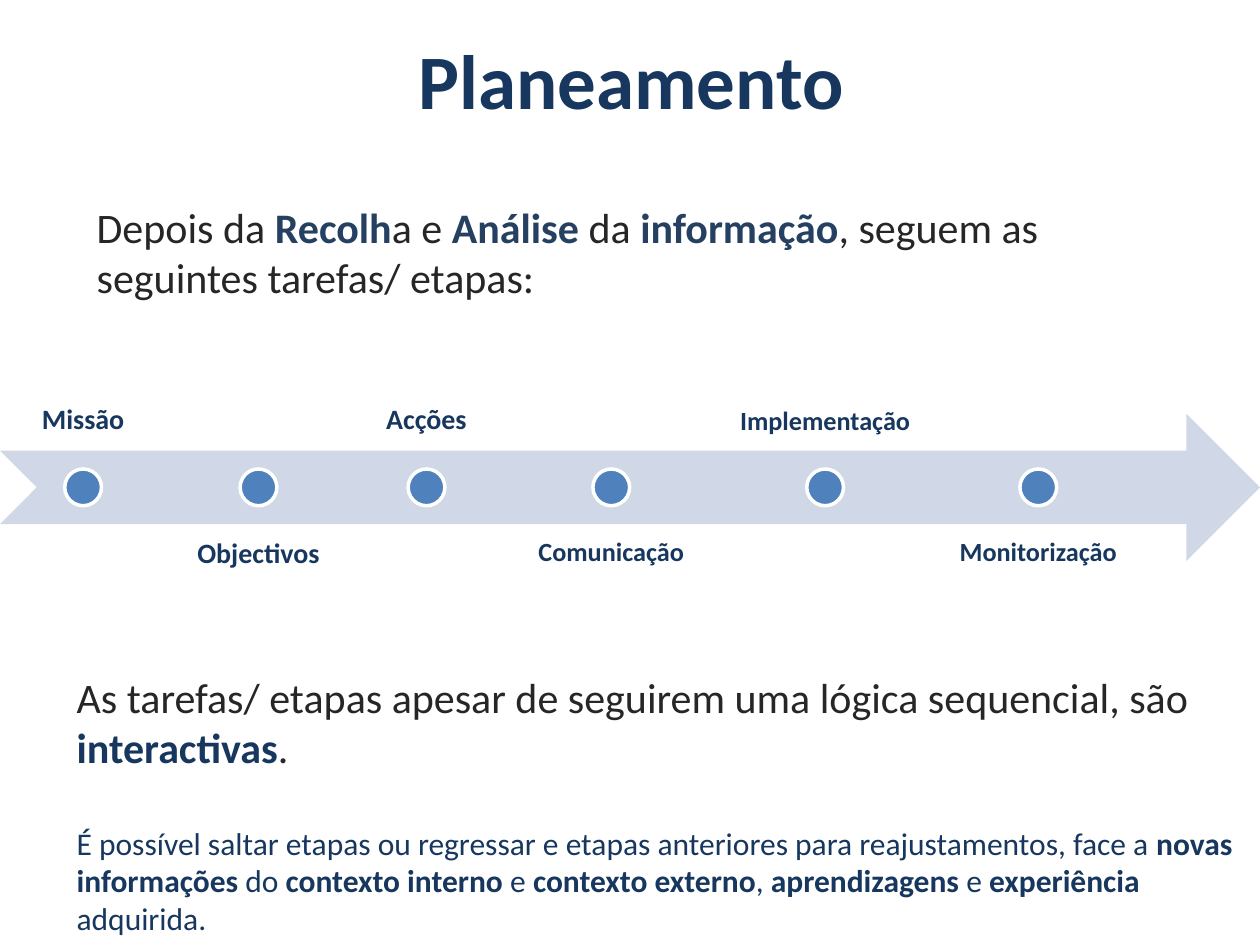
from pptx import Presentation
from pptx.dml.color import RGBColor
from pptx.enum.shapes import MSO_SHAPE
from pptx.enum.text import MSO_ANCHOR, PP_ALIGN
from pptx.util import Pt

ARROW, DOT = MSO_SHAPE.NOTCHED_RIGHT_ARROW, MSO_SHAPE.OVAL
TOP, MIDDLE, BOTTOM = MSO_ANCHOR.TOP, MSO_ANCHOR.MIDDLE, MSO_ANCHOR.BOTTOM
CENTER = PP_ALIGN.CENTER

FONT = "Calibri"
NAVY, STEEL, CHARCOAL = "17375E", "254061", "262626"
BAND, BLUE, WHITE = "D0D8E8", "4F81BD", "FFFFFF"

# label, left and width of its column, text size
STAGES = [
    ("Missão", 0, 95, 16),
    ("Objectivos", 98, 99.4, 16),
    ("Acções", 199.4, 88.6, 16),
    ("Comunicação", 291, 116.6, 15),
    ("Implementação", 410, 123, 15),
    ("Monitorização", 538.6, 109.4, 15),
]


def color(hex_string):
    return RGBColor.from_string(hex_string)


def set_font(font, size, hex_string, bold=False):
    font.name, font.size, font.bold = FONT, Pt(size), bold
    font.color.rgb = color(hex_string)


def add_shape(shapes, preset, left, top, width, height, fill):
    shape = shapes.add_shape(preset, Pt(left), Pt(top), Pt(width), Pt(height))
    shape.shadow.inherit = False
    shape.fill.solid()
    shape.fill.fore_color.rgb = color(fill)
    shape.line.fill.background()
    return shape


def add_frame(shapes, left, top, width, height):
    frame = shapes.add_textbox(Pt(left), Pt(top), Pt(width), Pt(height)).text_frame
    frame.word_wrap = True
    return frame


def write_emphasized(paragraph, text, size, plain, strong):
    """Write text in which every second part between asterisks is bold."""
    set_font(paragraph.font, size, plain)
    for index, part in enumerate(text.split("*")):
        run = paragraph.add_run()
        run.text = part
        if index % 2:
            run.font.bold = True
            run.font.color.rgb = color(strong)


def add_title(slide, left, top, width, height):
    title = slide.shapes.title
    title.left, title.top = Pt(left), Pt(top)
    title.width, title.height = Pt(width), Pt(height)
    title.text_frame.vertical_anchor = MIDDLE
    heading = title.text_frame.paragraphs[0]
    heading.text = "Planeamento"
    heading.alignment = CENTER
    set_font(heading.font, 44, NAVY, bold=True)


def add_intro(slide, left, top, width, height):
    frame = add_frame(slide.shapes, left, top, width, height)
    write_emphasized(
        frame.paragraphs[0],
        "Depois da *Recolh*a e *Análise* da *informação*, "
        "seguem as seguintes tarefas/ etapas:",
        24, CHARCOAL, STEEL)


def add_label(shapes, label, size, anchor, left, top, width, height):
    frame = add_frame(shapes, left, top, width, height)
    frame.vertical_anchor = anchor
    frame.margin_left = frame.margin_right = Pt(8.5)
    frame.margin_top = frame.margin_bottom = Pt(8.5)
    paragraph = frame.paragraphs[0]
    paragraph.text = label
    paragraph.alignment = CENTER
    paragraph.line_spacing = 0.9
    set_font(paragraph.font, size, NAVY, bold=True)


def add_timeline(slide, left, top, width, height):
    """Draw the arrow with its stages, labelled above and below in turn."""
    shapes = slide.shapes.add_group_shape().shapes
    arrow_height = height * 0.4
    arrow_top = top + (height - arrow_height) / 2
    add_shape(shapes, ARROW, left, arrow_top, width, arrow_height, BAND)
    dot_size = arrow_height / 4
    dot_top = top + (height - dot_size) / 2
    for index, (label, offset, column, size) in enumerate(STAGES):
        above = index % 2 == 0
        add_label(shapes, label, size, BOTTOM if above else TOP, left + offset,
                  top if above else top + height - arrow_height,
                  column, arrow_height)
        dot = add_shape(shapes, DOT, left + offset + (column - dot_size) / 2,
                        dot_top, dot_size, dot_size, BLUE)
        dot.line.color.rgb = color(WHITE)
        dot.line.width = Pt(2)


def add_conclusion(slide, left, top, width, height):
    frame = add_frame(slide.shapes, left, top, width, height)
    write_emphasized(
        frame.paragraphs[0],
        "As tarefas/ etapas apesar de seguirem uma lógica sequencial, são "
        "*interactivas*.",
        24, CHARCOAL, NAVY)
    detail = frame.add_paragraph()
    detail.space_before = Pt(29.3)
    write_emphasized(
        detail,
        "É possível saltar etapas ou regressar e etapas anteriores para "
        "reajustamentos, face a *novas informações *do *contexto interno *e "
        "*contexto externo*, *aprendizagens* e *experiência* adquirida.",
        18, NAVY, NAVY)


def main():
    deck = Presentation()
    deck.slide_width, deck.slide_height = Pt(720), Pt(540)
    slide = deck.slides.add_slide(deck.slide_layouts.get_by_name("Title Only"))
    add_title(slide, 36.7, 0, 648, 90)
    add_intro(slide, 48.2, 111.6, 629.3, 65.5)
    add_timeline(slide, 0, 173.5, 720, 210)
    add_conclusion(slide, 36.7, 380.2, 683.3, 159.8)
    deck.save("out.pptx")


if __name__ == "__main__":
    main()
